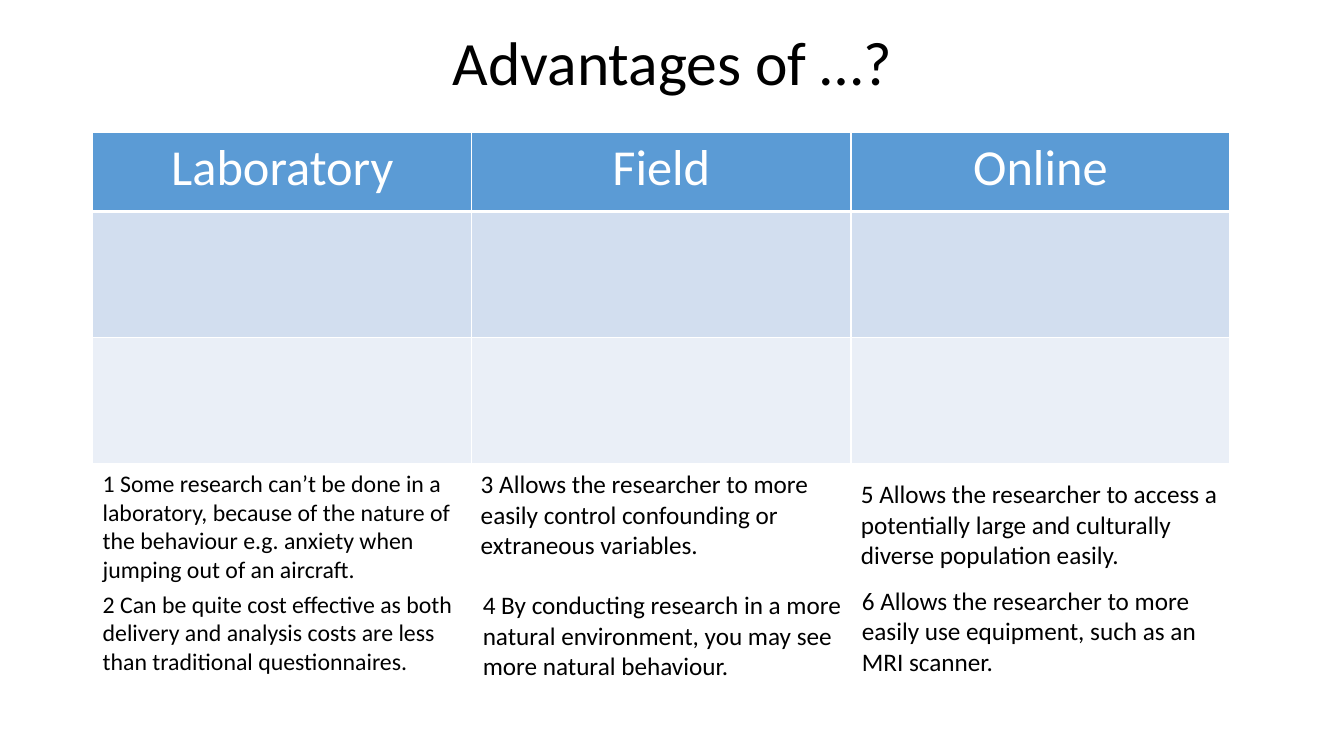
from dataclasses import dataclass

from lxml.etree import SubElement
from pptx import Presentation
from pptx.dml.color import RGBColor
from pptx.enum.text import MSO_ANCHOR, MSO_AUTO_SIZE, PP_ALIGN
from pptx.oxml.ns import qn
from pptx.util import Inches, Pt


@dataclass(frozen=True)
class Theme:
    font: str = "Calibri"
    ink: str = "000000"
    paper: str = "FFFFFF"
    header: str = "5B9BD5"
    bands: tuple = ("D2DEEF", "EAEFF7")
    title_size: int = 44
    header_size: int = 36
    rule: int = 1
    header_rule: int = 3


@dataclass(frozen=True)
class Box:
    left: float
    top: float
    width: float
    height: float

    def lengths(self):
        return [Inches(n) for n in (self.left, self.top, self.width, self.height)]


THEME = Theme()
SLIDE_SIZE = (13.33, 7.5)
TITLE_BOX = Box(0.92, 0, 11.5, 1.31)
TABLE_BOX = Box(0.92, 1.31, 11.28, 3.29)
CARD_BOX = Box(0.92, 4.6, 11.28, 2.2)
HEADER_HEIGHT = 0.79
HEADINGS = ("Laboratory", "Field", "Online")
CARDS = (
    (0, 0, 0, 1.25, 17, "1 Some research can’t be done in a laboratory, because of the nature of "
     "the behaviour e.g. anxiety when jumping out of an aircraft."),
    (0, 0, 1.2, 0.96, 17, "2 Can be quite cost effective as both delivery and analysis costs are "
     "less than traditional questionnaires."),
    (1, -0.01, 0, 1.01, 18, "3 Allows the researcher to more easily control confounding or "
     "extraneous variables."),
    (1, 0.01, 1.2, 1.01, 18, "4 By conducting research in a more natural environment, you may see "
     "more natural behaviour."),
    (2, 0, 0.1, 1.01, 18, "5 Allows the researcher to access a potentially large and culturally "
     "diverse population easily."),
    (2, 0.01, 1.16, 1.01, 18, "6 Allows the researcher to more easily use equipment, such as an "
     "MRI scanner."),
)


def apply(target, settings):
    for name, value in settings.items():
        setattr(target, name, value)


def write(frame, text, size, color, **paragraph_format):
    paragraph = frame.paragraphs[0]
    apply(paragraph, paragraph_format)
    run = paragraph.add_run()
    run.text = text
    apply(run.font, {"name": THEME.font, "size": Pt(size), "bold": False})
    run.font.color.rgb = RGBColor.from_string(color)


def add_text(slide, box, text, size, frame_format, **paragraph_format):
    frame = slide.shapes.add_textbox(*box.lengths()).text_frame
    apply(frame, {"word_wrap": True, **frame_format})
    write(frame, text, size, THEME.ink, **paragraph_format)


def add_title(slide, box):
    add_text(slide, box, "Advantages of …?", THEME.title_size,
             {"vertical_anchor": MSO_ANCHOR.MIDDLE},
             alignment=PP_ALIGN.CENTER, line_spacing=0.9)


def style_cell(cell, fill, bottom_rule):
    properties = cell._tc.get_or_add_tcPr()
    for side in "LRTB":
        width = bottom_rule if side == "B" else THEME.rule
        line = SubElement(properties, qn(f"a:ln{side}"), w=str(Pt(width)))
        SubElement(SubElement(line, qn("a:solidFill")), qn("a:srgbClr"), val=THEME.paper)
    cell.fill.solid()
    cell.fill.fore_color.rgb = RGBColor.from_string(fill)


def add_method_table(slide, box):
    fills = (THEME.header, *THEME.bands)
    table = slide.shapes.add_table(len(fills), len(HEADINGS), *box.lengths()).table
    band_height = (box.height - HEADER_HEIGHT) / len(THEME.bands)
    for column in table.columns:
        column.width = Inches(box.width / len(HEADINGS))
    for index, fill in enumerate(fills):
        table.rows[index].height = Inches(band_height if index else HEADER_HEIGHT)
        for cell in table.rows[index].cells:
            style_cell(cell, fill, THEME.rule if index else THEME.header_rule)
    for cell, heading in zip(table.rows[0].cells, HEADINGS):
        write(cell.text_frame, heading, THEME.header_size, THEME.paper,
              alignment=PP_ALIGN.CENTER)


def add_cards(slide, box):
    width = box.width / len(HEADINGS)
    for column, shift, drop, height, size, text in CARDS:
        card = Box(box.left + column * width + shift, box.top + drop, width, height)
        add_text(slide, card, text, size, {"auto_size": MSO_AUTO_SIZE.SHAPE_TO_FIT_TEXT})


def main():
    presentation = Presentation()
    presentation.slide_width, presentation.slide_height = map(Inches, SLIDE_SIZE)
    slide = presentation.slides.add_slide(presentation.slide_layouts[6])
    add_title(slide, TITLE_BOX)
    add_method_table(slide, TABLE_BOX)
    add_cards(slide, CARD_BOX)
    presentation.save("out.pptx")


if __name__ == "__main__":
    main()
